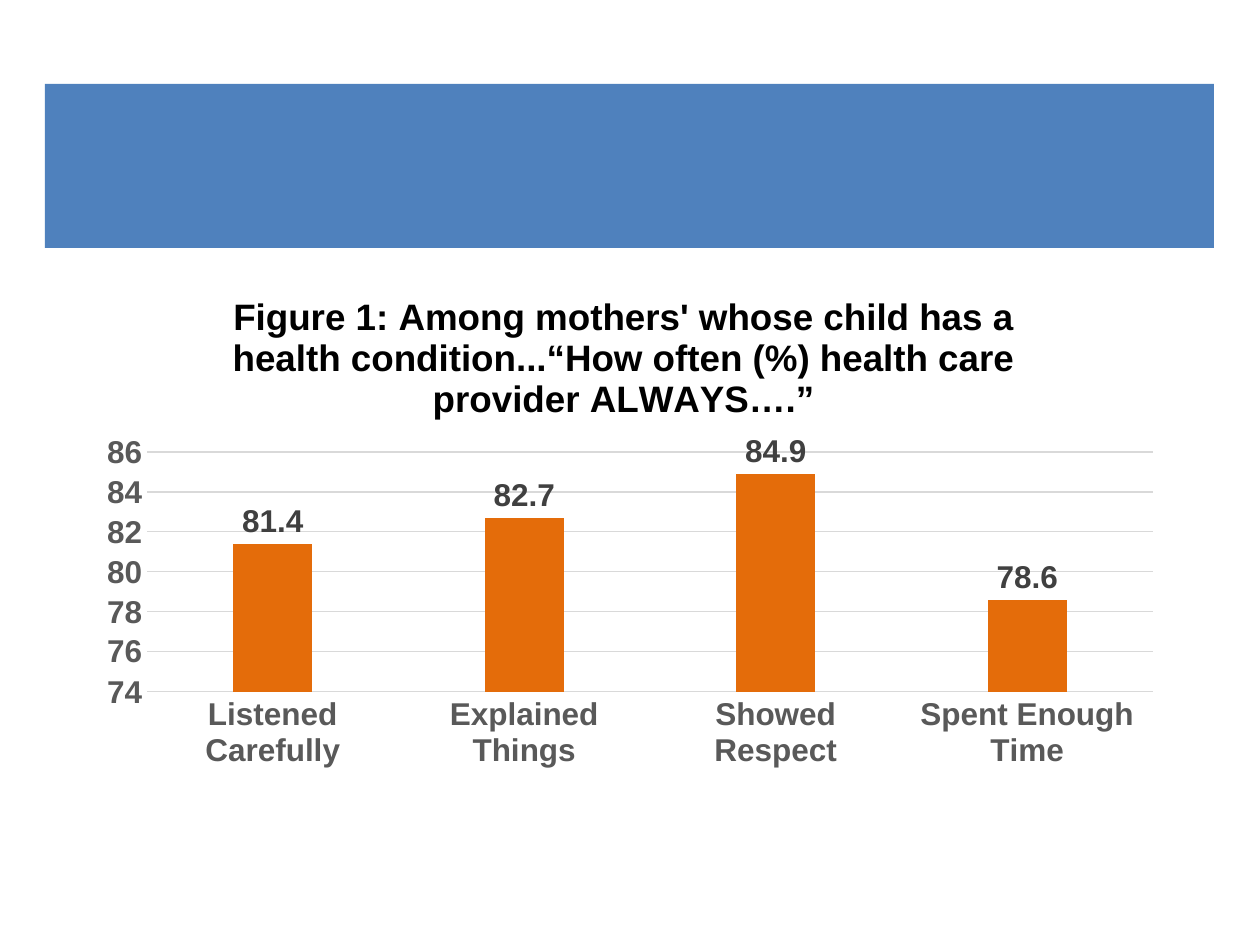
from dataclasses import dataclass
from typing import Any

from lxml import etree
from pptx import Presentation, util as u
from pptx.chart import data as chart_data
from pptx.dml import color
from pptx.enum import chart as chart_enum, shapes

PX_PER_INCH = 126


@dataclass(frozen=True)
class Theme:
    font: str = "Arial"
    title_size: int = 21
    label_size: int = 18
    banner: str = "4F81BD"
    bar: str = "E46C0A"
    title: str = "000000"
    axis: str = "595959"
    value: str = "404040"
    grid: str = "D9D9D9"


@dataclass(frozen=True)
class Area:
    left: int
    top: int
    width: int
    height: int


@dataclass(frozen=True)
class Bar:
    category: str
    percent: float


THEME = Theme()
PAGE = Area(0, 0, 1260, 945)
BANNER = Area(45, 84, 1169, 164)
CHART = Area(86, 258, 1090, 519)
PLOT = Area(147, 452, 1006, 240)
TITLE_LEFT, TITLE_TOP = 226, 287
TITLE = (
    "Figure 1: Among mothers' whose child has a health condition..."
    "“How often (%) health care provider ALWAYS….”"
)
BARS = [
    Bar("Listened Carefully", 81.4),
    Bar("Explained Things", 82.7),
    Bar("Showed Respect", 84.9),
    Bar("Spent Enough Time", 78.6),
]


def px(length: int) -> u.Emu:
    return u.Emu(round(length * 914400 / PX_PER_INCH))


def bounds(area: Area) -> list[u.Emu]:
    return [px(n) for n in (area.left, area.top, area.width, area.height)]


def rgb(value: str) -> color.RGBColor:
    return color.RGBColor.from_string(value)


def style_font(font: Any, *, size: int, fill: str) -> None:
    font.name = THEME.font
    font.size = u.Pt(size)
    font.bold = True
    font.color.rgb = rgb(fill)


def style_line(line: Any, *, fill: str, width: float) -> None:
    line.color.rgb = rgb(fill)
    line.width = u.Pt(width)


def write_title(chart: Any, words: str, *, size: int, fill: str) -> None:
    chart.has_title = True
    para = chart.chart_title.text_frame.paragraphs[0]
    span = para.add_run()
    span.text = words
    style_font(span.font, size=size, fill=fill)


def place(element: Any, **settings: str | float) -> None:
    namespace = element.nsmap["c"]
    layout = element.find(f"{{{namespace}}}layout")
    if layout is None:
        layout = etree.Element(f"{{{namespace}}}layout")
        text = element.find(f"{{{namespace}}}tx")
        element.insert(0 if text is None else 1, layout)
    for child in list(layout):
        layout.remove(child)
    manual = etree.SubElement(layout, f"{{{namespace}}}manualLayout")
    for name, value in settings.items():
        etree.SubElement(manual, f"{{{namespace}}}{name}", val=str(value))


def share_x(left: int) -> float:
    return round((left - CHART.left) / CHART.width, 4)


def share_y(top: int) -> float:
    return round((top - CHART.top) / CHART.height, 4)


def draw_banner(page: Any, area: Area) -> None:
    banner = page.shapes.add_shape(shapes.MSO_SHAPE.RECTANGLE, *bounds(area))
    banner.shadow.inherit = False
    banner.fill.solid()
    banner.fill.fore_color.rgb = rgb(THEME.banner)
    banner.line.fill.background()


def style_axes(chart: Any) -> None:
    for axis in (chart.category_axis, chart.value_axis):
        axis.major_tick_mark = chart_enum.XL_TICK_MARK.NONE
        axis.minor_tick_mark = chart_enum.XL_TICK_MARK.NONE
        style_font(axis.tick_labels.font, size=THEME.label_size, fill=THEME.axis)
    style_line(chart.category_axis.format.line, fill=THEME.grid, width=0.75)
    values = chart.value_axis
    values.minimum_scale, values.maximum_scale, values.major_unit = 74, 86, 2
    values.format.line.fill.background()
    values.has_major_gridlines = True
    style_line(values.major_gridlines.format.line, fill=THEME.grid, width=0.75)


def style_bars(plot: Any) -> None:
    plot.gap_width = 219
    plot.overlap = -27
    plot.vary_by_categories = False
    series = plot.series[0]
    series.format.fill.solid()
    series.format.fill.fore_color.rgb = rgb(THEME.bar)
    labels = series.data_labels
    labels.show_value = True
    labels.position = chart_enum.XL_LABEL_POSITION.OUTSIDE_END
    style_font(labels.font, size=THEME.label_size, fill=THEME.value)


def draw_chart(page: Any, bars: list[Bar]) -> None:
    data = chart_data.CategoryChartData()
    data.categories = [bar.category for bar in bars]
    data.add_series("Series 1", [bar.percent for bar in bars])
    kind = chart_enum.XL_CHART_TYPE.COLUMN_CLUSTERED
    chart = page.shapes.add_chart(kind, *bounds(CHART), data).chart
    chart.has_legend = False
    style_font(chart.font, size=THEME.label_size, fill=THEME.title)
    write_title(chart, TITLE, size=THEME.title_size, fill=THEME.title)
    chart.chart_title.include_in_layout = False
    style_axes(chart)
    style_bars(chart.plots[0])
    place(
        chart.chart_title._element,
        xMode="edge",
        yMode="edge",
        x=share_x(TITLE_LEFT),
        y=share_y(TITLE_TOP),
    )
    place(
        chart._chartSpace.chart.plotArea,
        layoutTarget="inner",
        xMode="edge",
        yMode="edge",
        x=share_x(PLOT.left),
        y=share_y(PLOT.top),
        w=round(PLOT.width / CHART.width, 4),
        h=round(PLOT.height / CHART.height, 4),
    )


def main() -> None:
    deck = Presentation()
    deck.slide_width, deck.slide_height = px(PAGE.width), px(PAGE.height)
    page = deck.slides.add_slide(deck.slide_layouts[6])
    draw_banner(page, BANNER)
    draw_chart(page, BARS)
    deck.save("out.pptx")


if __name__ == "__main__":
    main()
